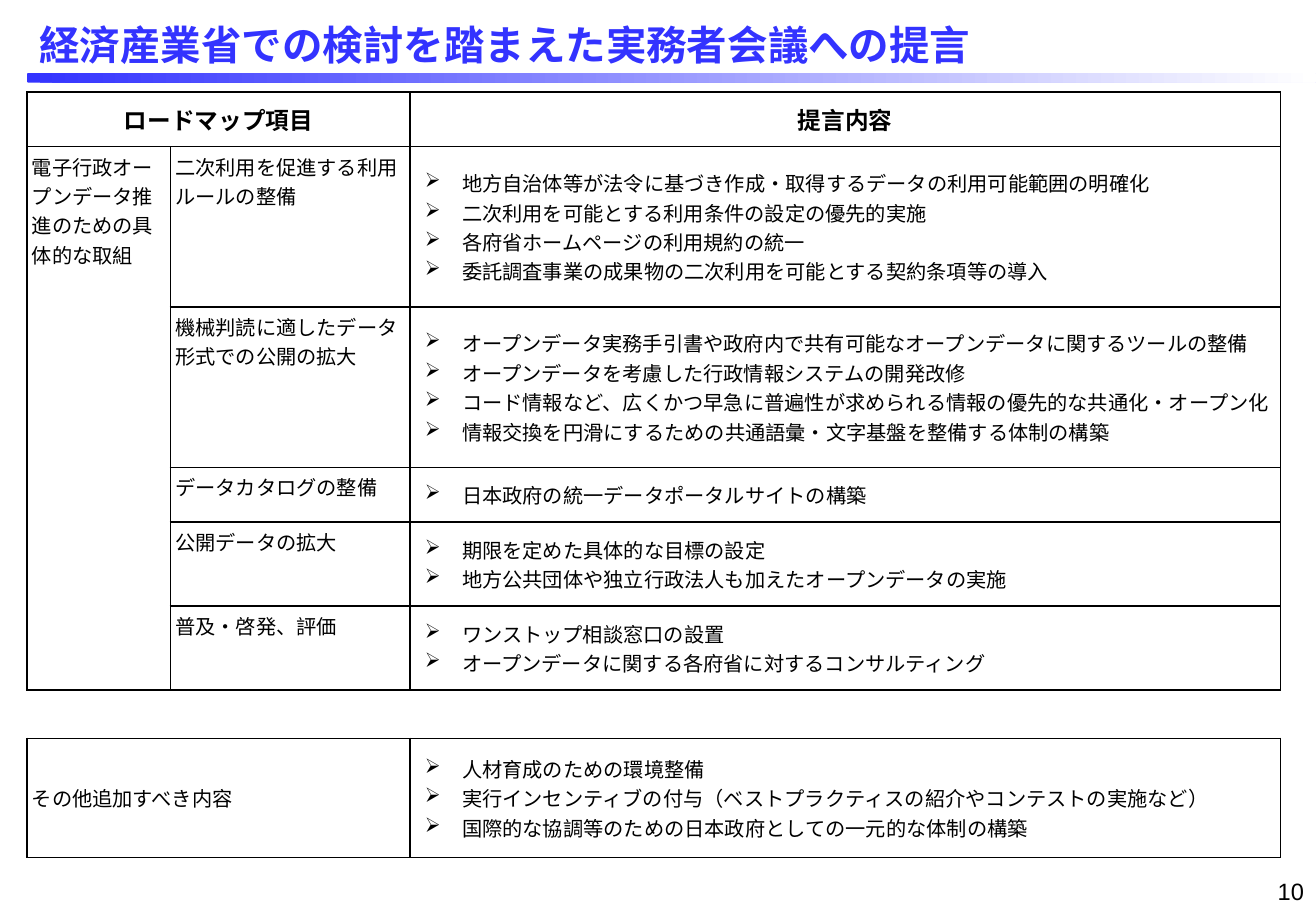
"""Build the slide of proposals to the working-level open data council."""
from lxml.etree import SubElement
from pptx import Presentation
from pptx.dml.color import RGBColor
from pptx.enum.shapes import MSO_SHAPE
from pptx.enum.text import MSO_ANCHOR, MSO_AUTO_SIZE, PP_ALIGN
from pptx.oxml.ns import qn
from pptx.util import Pt

COLORS = {"title": "3333FF", "text": "000000", "border": "000000", "paper": "FFFFFF"}
CJK = "Noto Sans CJK JP"


def write(frame, lines, size=12, bold=False, color="text", font=CJK,
          align=PP_ALIGN.LEFT, anchor=MSO_ANCHOR.TOP, bullet=None):
    """Fill a text frame with one paragraph per line."""
    frame.vertical_anchor = anchor
    for index, line in enumerate(lines):
        paragraph = frame.add_paragraph() if index else frame.paragraphs[0]
        paragraph.alignment = align
        run = paragraph.add_run()
        run.text = line
        run.font.size = Pt(size)
        run.font.bold = bold
        run.font.name = font
        run.font.color.rgb = RGBColor.from_string(COLORS[color])
        SubElement(run.font._element, qn("a:ea"), typeface=CJK)
        if bullet:
            properties = paragraph._p.get_or_add_pPr()
            properties.set("marL", str(Pt(28)))
            properties.set("indent", str(Pt(-22)))
            SubElement(properties, qn("a:buChar"), char=bullet)


presentation = Presentation()
presentation.slide_width, presentation.slide_height = Pt(780), Pt(540)
slide = presentation.slides.add_slide(presentation.slide_layouts[5])

underline = slide.shapes.add_shape(
    MSO_SHAPE.ROUNDED_RECTANGLE, Pt(16), Pt(43.2), Pt(764), Pt(5.8))
underline.shadow.inherit = False
underline.line.fill.background()
underline.fill.gradient()
underline.fill.gradient_angle = 0
for stop, name in zip(underline.fill.gradient_stops, ("title", "paper")):
    stop.color.rgb = RGBColor.from_string(COLORS[name])

heading = slide.shapes.title
heading.left, heading.top, heading.width, heading.height = Pt(16), Pt(9.4), Pt(624), Pt(34)
heading.text_frame.auto_size = MSO_AUTO_SIZE.NONE
write(heading.text_frame, ["経済産業省での検討を踏まえた実務者会議への提言"], size=24, bold=True,
      color="title", font="Arial", anchor=MSO_ANCHOR.MIDDLE)

page_number = slide.shapes.add_textbox(Pt(600), Pt(516.2), Pt(180), Pt(23.8))
page_number.text_frame.word_wrap = True
write(page_number.text_frame, ["10"], size=14, font="Arial", align=PP_ALIGN.RIGHT)

column_widths = [85, 142, 516]
row_heights = [32.4, 95, 95, 32.4, 49.8, 49.8, 28.8, 70.6]
SPACER, OTHER = 6, 7
roadmap = slide.shapes.add_table(
    len(row_heights), len(column_widths), Pt(16), Pt(54.6),
    Pt(sum(column_widths)), Pt(sum(row_heights))).table
roadmap.first_row = roadmap.horz_banding = False
for column, width in zip(roadmap.columns, column_widths):
    column.width = Pt(width)
for row, height in zip(roadmap.rows, row_heights):
    row.height = Pt(height)

for row_index, row in enumerate(roadmap.rows):
    for cell in row.cells:
        cell.margin_left = cell.margin_right = Pt(2.9)
        cell.margin_top = cell.margin_bottom = Pt(2.9)
        for side in ("lnL", "lnR", "lnT", "lnB"):
            edge = SubElement(cell._tc.get_or_add_tcPr(), qn(f"a:{side}"), w=str(Pt(1)))
            if row_index == SPACER and side in ("lnL", "lnR"):
                SubElement(edge, qn("a:noFill"))
            else:
                ink = SubElement(edge, qn("a:solidFill"))
                SubElement(ink, qn("a:srgbClr"), val=COLORS["border"])
        cell.fill.solid()
        cell.fill.fore_color.rgb = RGBColor.from_string(COLORS["paper"])

for first, last in (((0, 0), (0, 1)), ((1, 0), (5, 0)),
                    ((SPACER, 0), (SPACER, 2)), ((OTHER, 0), (OTHER, 1))):
    roadmap.cell(*first).merge(roadmap.cell(*last))

for column_index, label in ((0, "ロードマップ項目"), (2, "提言内容")):
    write(roadmap.cell(0, column_index).text_frame, [label], size=14, bold=True,
          align=PP_ALIGN.CENTER)
    roadmap.cell(0, column_index).vertical_anchor = MSO_ANCHOR.MIDDLE
write(roadmap.cell(1, 0).text_frame, ["電子行政オープンデータ推進のための具体的な取組"])
write(roadmap.cell(OTHER, 0).text_frame, ["その他追加すべき内容"])
roadmap.cell(OTHER, 0).vertical_anchor = MSO_ANCHOR.MIDDLE

measures = ["二次利用を促進する利用ルールの整備", "機械判読に適したデータ形式での公開の拡大",
            "データカタログの整備", "公開データの拡大", "普及・啓発、評価"]
for row_index, measure in enumerate(measures, 1):
    write(roadmap.cell(row_index, 1).text_frame, [measure])

proposals = {
    1: ["地方自治体等が法令に基づき作成・取得するデータの利用可能範囲の明確化",
        "二次利用を可能とする利用条件の設定の優先的実施",
        "各府省ホームページの利用規約の統一",
        "委託調査事業の成果物の二次利用を可能とする契約条項等の導入"],
    2: ["オープンデータ実務手引書や政府内で共有可能なオープンデータに関するツールの整備",
        "オープンデータを考慮した行政情報システムの開発改修",
        "コード情報など、広くかつ早急に普遍性が求められる情報の優先的な共通化・オープン化",
        "情報交換を円滑にするための共通語彙・文字基盤を整備する体制の構築"],
    3: ["日本政府の統一データポータルサイトの構築"],
    4: ["期限を定めた具体的な目標の設定",
        "地方公共団体や独立行政法人も加えたオープンデータの実施"],
    5: ["ワンストップ相談窓口の設置",
        "オープンデータに関する各府省に対するコンサルティング"],
    OTHER: ["人材育成のための環境整備",
            "実行インセンティブの付与（ベストプラクティスの紹介やコンテストの実施など）",
            "国際的な協調等のための日本政府としての一元的な体制の構築"],
}
for row_index, items in proposals.items():
    write(roadmap.cell(row_index, 2).text_frame, items, bullet="➢")
    roadmap.cell(row_index, 2).vertical_anchor = MSO_ANCHOR.MIDDLE

presentation.save("out.pptx")
